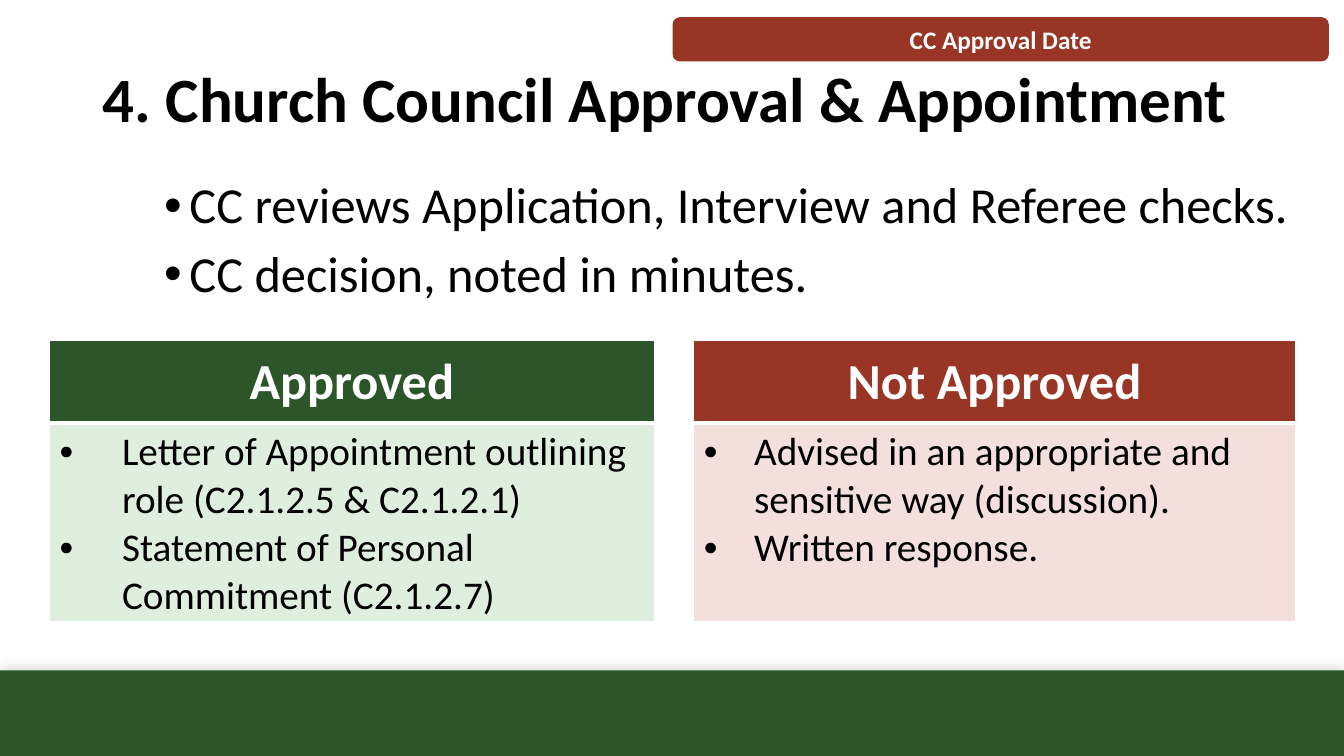
from lxml.etree import SubElement
from pptx import Presentation
from pptx.dml.color import RGBColor
from pptx.enum.shapes import MSO_SHAPE
from pptx.enum.text import MSO_ANCHOR, MSO_AUTO_SIZE, PP_ALIGN
from pptx.oxml.ns import qn
from pptx.util import Inches, Pt

COLORS = {
    "green": "2C5629",
    "red": "993525",
    "pale_green": "DFEFDD",
    "pale_red": "F3E0DC",
    "white": "FFFFFF",
    "black": "000000",
}
FORMATS = {
    "title": {"size": Pt(45), "bold": True},
    "tag": {"size": Pt(18), "bold": True},
    "review": {"size": Pt(36), "bold": False},
    "outcome": {"size": Pt(36), "bold": True},
    "action": {"size": Pt(28), "bold": False},
}
REVIEW_STEPS = [
    "CC reviews Application, Interview and Referee checks.",
    "CC decision, noted in minutes.",
]
APPROVED_ACTIONS = [
    "Letter of Appointment outlining role (C2.1.2.5 & C2.1.2.1)",
    "Statement of Personal Commitment (C2.1.2.7)",
]
DECLINED_ACTIONS = [
    "Advised in an appropriate and sensitive way (discussion).",
    "Written response.",
]


def rgb(color):
    return RGBColor.from_string(COLORS[color])


def paint(target, color):
    target.fill.solid()
    target.fill.fore_color.rgb = rgb(color)


def write(paragraph, text, style, color, **layout):
    paragraph.text = text
    font = paragraph.font
    for name, value in {"name": "Calibri", **FORMATS[style]}.items():
        setattr(font, name, value)
    font.color.rgb = rgb(color)
    for name, value in layout.items():
        setattr(paragraph, name, value)


def write_bullets(frame, texts, style, indent, **layout):
    for index, text in enumerate(texts):
        paragraph = frame.add_paragraph() if index else frame.paragraphs[0]
        properties = paragraph._p.get_or_add_pPr()
        properties.set("marL", str(Inches(indent)))
        properties.set("indent", str(-Inches(indent)))
        SubElement(properties, qn("a:buFont"), typeface="Arial")
        SubElement(properties, qn("a:buChar"), char="•")
        space = {"space_before": Pt(10)} if index and style == "review" else {}
        write(paragraph, text, style, "black", **layout, **space)


def add_block(slide, box, preset, color):
    block = slide.shapes.add_shape(preset, *map(Inches, box))
    paint(block, color)
    block.line.fill.background()
    block.shadow.inherit = False
    return block


def add_footer(slide, box):
    footer = add_block(slide, box, MSO_SHAPE.RECTANGLE, "green")
    effects = footer._element.spPr.find(qn("a:effectLst"))
    shadow = SubElement(effects, qn("a:outerShdw"), blurRad=str(Pt(7)),
                        dist=str(Pt(3)), dir="16200000", rotWithShape="0")
    tint = SubElement(shadow, qn("a:srgbClr"), val=COLORS["black"])
    SubElement(tint, qn("a:alpha"), val="13000")


def add_title(slide, box):
    title = slide.shapes.title
    for name, value in zip(("left", "top", "width", "height"), box):
        setattr(title, name, Inches(value))
    frame = title.text_frame
    frame.auto_size = MSO_AUTO_SIZE.NONE
    frame.vertical_anchor = MSO_ANCHOR.MIDDLE
    write(frame.paragraphs[0], "4. Church Council Approval & Appointment",
          "title", "black", alignment=PP_ALIGN.LEFT, line_spacing=0.9)


def add_tag(slide, box):
    tag = add_block(slide, box, MSO_SHAPE.ROUNDED_RECTANGLE, "red")
    tag.text_frame.vertical_anchor = MSO_ANCHOR.MIDDLE
    write(tag.text_frame.paragraphs[0], "CC Approval Date", "tag", "white",
          alignment=PP_ALIGN.CENTER)


def add_review(slide, box):
    frame = slide.shapes.add_textbox(*map(Inches, box)).text_frame
    frame.word_wrap = True
    write_bullets(frame, REVIEW_STEPS, "review", 0.25, line_spacing=0.9)


def add_borders(cell, bottom):
    properties = cell._tc.get_or_add_tcPr()
    for side, width in {"L": 1, "R": 1, "T": 1, "B": bottom}.items():
        border = SubElement(properties, qn(f"a:ln{side}"), w=str(Pt(width)))
        fill = SubElement(border, qn("a:solidFill"))
        SubElement(fill, qn("a:srgbClr"), val=COLORS["white"])


def add_outcomes(slide, box):
    table = slide.shapes.add_table(2, 3, *map(Inches, box)).table
    table.first_row = table.horz_banding = False
    left, top, width, height = box
    header, gap, approved = 0.82, 0.39, 6
    for column, size in zip(table.columns, (approved, gap, width - approved - gap)):
        column.width = Inches(size)
    for row, size in zip(table.rows, (header, height - header)):
        row.height = Inches(size)

    fills = [("green", "white", "red"), ("pale_green", "white", "pale_red")]
    for row, (row_fills, bottom) in enumerate(zip(fills, (3, 1))):
        for column, color in enumerate(row_fills):
            cell = table.cell(row, column)
            add_borders(cell, bottom)
            paint(cell, color)

    outcomes = [
        (0, "Approved", APPROVED_ACTIONS, 0.62, MSO_ANCHOR.MIDDLE),
        (2, "Not Approved", DECLINED_ACTIONS, 0.5, MSO_ANCHOR.TOP),
    ]
    for column, outcome, actions, indent, anchor in outcomes:
        heading, details = table.cell(0, column), table.cell(1, column)
        heading.vertical_anchor = MSO_ANCHOR.MIDDLE
        details.vertical_anchor = anchor
        write(heading.text_frame.paragraphs[0], outcome, "outcome", "white",
              alignment=PP_ALIGN.CENTER)
        write_bullets(details.text_frame, actions, "action", indent)


def build_approval_slide(deck):
    slide = deck.slides.add_slide(deck.slide_layouts[5])
    add_footer(slide, (0, 6.65, 13.33, 0.85))
    add_title(slide, (0.92, 0.29, 11.5, 1.45))
    add_tag(slide, (6.67, 0.17, 6.51, 0.44))
    add_review(slide, (1.53, 1.74, 11.38, 1.5))
    add_outcomes(slide, (0.49, 3.38, 12.36, 2.79))


def main():
    deck = Presentation()
    deck.slide_width, deck.slide_height = Inches(13.33), Inches(7.5)
    build_approval_slide(deck)
    deck.save("out.pptx")


if __name__ == "__main__":
    main()
